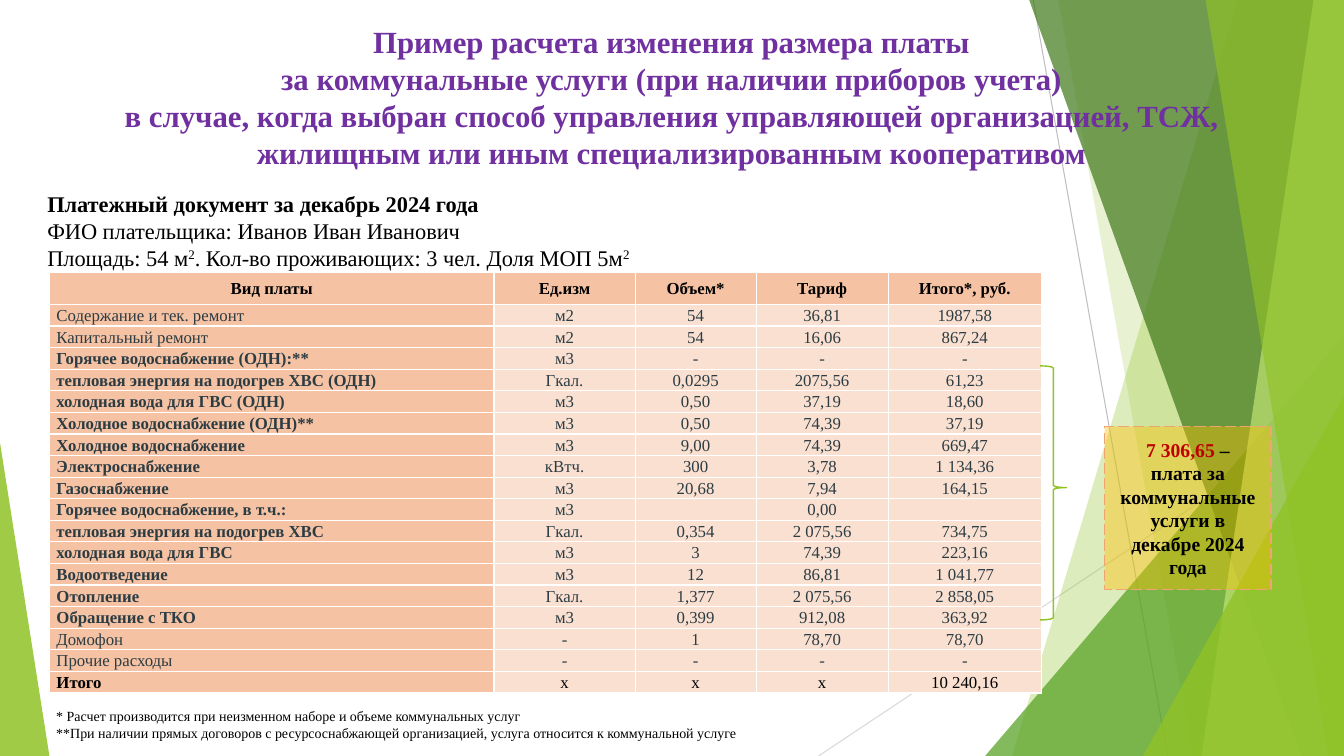
from lxml.etree import SubElement
from pptx import Presentation
from pptx.dml.color import RGBColor
from pptx.enum.dml import MSO_LINE
from pptx.enum.shapes import MSO_CONNECTOR, MSO_SHAPE
from pptx.enum.text import MSO_ANCHOR, MSO_AUTO_SIZE, PP_ALIGN
from pptx.oxml.ns import qn
from pptx.util import Inches, Pt

COLORS = {
    "black": "000000", "slate": "2C3C43", "purple": "7030A0", "red": "C00000",
    "gold": "FFC000", "orange": "F1A374", "peach": "F5C2A3", "cream": "FAE0D1",
    "green": "90C226", "leaf": "54A021", "forest": "3F7819", "lime": "C0E474",
    "gray": "BFBFBF", "silver": "D9D9D9",
}

TITLE_LINES = [
    "Пример расчета изменения размера платы",
    "за коммунальные услуги (при наличии приборов учета)",
    "в случае, когда выбран способ управления управляющей организацией, ТСЖ,",
    "жилищным или иным специализированным кооперативом",
]
HEADERS = ["Вид платы", "Ед.изм", "Объем*", "Тариф", "Итого*, руб."]
CHARGES = """Содержание и тек. ремонт|м2|54|36,81|1987,58
Капитальный ремонт|м2|54|16,06|867,24
Горячее водоснабжение (ОДН):**|м3|-|-|-
тепловая энергия на подогрев ХВС (ОДН)|Гкал.|0,0295|2075,56|61,23
холодная вода для ГВС (ОДН)|м3|0,50|37,19|18,60
Холодное водоснабжение (ОДН)**|м3|0,50|74,39|37,19
Холодное водоснабжение|м3|9,00|74,39|669,47
Электроснабжение|кВтч.|300|3,78|1 134,36
Газоснабжение|м3|20,68|7,94|164,15
Горячее водоснабжение, в т.ч.:|м3||0,00|
тепловая энергия на подогрев ХВС|Гкал.|0,354|2 075,56|734,75
холодная вода для ГВС|м3|3|74,39|223,16
Водоотведение|м3|12|86,81|1 041,77
Отопление|Гкал.|1,377|2 075,56|2 858,05
Обращение с ТКО|м3|0,399|912,08|363,92
Домофон|-|1|78,70|78,70
Прочие расходы|-|-|-|-
Итого|х|х|х|10 240,16"""
NOTES = [
    "* Расчет производится при неизменном наборе и объеме коммунальных услуг",
    "**При наличии прямых договоров с ресурсоснабжающей организацией, "
    "услуга относится к коммунальной услуге",
]
UTILITY_ROWS = range(3, 16)
COLUMN_WIDTHS = [33.08, 10.5, 9, 9.83, 11.4]
HEADER_HEIGHT, ROW_HEIGHT = 4.27, 2.85


class Slide:
    """Draws on one page; every length is a percentage of its width or height."""

    font_name = "Times New Roman"

    def __init__(self, deck):
        self.width, self.height = deck.slide_width, deck.slide_height
        self.page = deck.slides.add_slide(deck.slide_layouts[5])
        self.shapes = self.page.shapes

    def x(self, share):
        return round(self.width * share / 100)

    def y(self, share):
        return round(self.height * share / 100)

    def area(self, left, top, width, height):
        return self.x(left), self.y(top), self.x(width), self.y(height)

    def color(self, name):
        return RGBColor.from_string(COLORS[name])

    def paint(self, shape, color, opacity=100):
        shape.shadow.inherit = False
        shape.line.fill.background()
        shape.fill.solid()
        shape.fill.fore_color.rgb = self.color(color)
        tint = shape._element.spPr.find(qn("a:solidFill")).find(qn("a:srgbClr"))
        SubElement(tint, qn("a:alpha"), val=str(opacity * 1000))

    def style(self, span, size, color="black", bold=False, raised=False):
        values = {"name": self.font_name, "size": Pt(size), "bold": bold}
        for name, value in values.items():
            setattr(span.font, name, value)
        span.font.color.rgb = self.color(color)
        if raised:
            span.font._element.set("baseline", "30000")

    def fill_frame(self, frame, paragraphs, align=PP_ALIGN.LEFT, **layout):
        """Fill a frame; a paragraph is a list of (text, format) spans."""
        for name, value in {"word_wrap": True, **layout}.items():
            setattr(frame, name, value)
        for number, spans in enumerate(paragraphs):
            para = frame.add_paragraph() if number else frame.paragraphs[0]
            para.alignment = align
            for text, form in spans:
                span = para.add_run()
                span.text = text
                self.style(span, **form)

    def title(self, lines, place, **form):
        title = self.shapes.title
        self.shapes._spTree.append(title._element)
        title.left, title.top, title.width, title.height = self.area(*place)
        layout = {"auto_size": MSO_AUTO_SIZE.NONE, "word_wrap": True,
                  "vertical_anchor": MSO_ANCHOR.TOP, "margin_top": Inches(0.07)}
        for name, value in layout.items():
            setattr(title.text_frame, name, value)
        para = title.text_frame.paragraphs[0]
        para.text = "\v".join(lines)
        para.alignment = PP_ALIGN.CENTER
        for span in para.runs:
            self.style(span, **form)

    def text(self, place, paragraphs):
        box = self.shapes.add_textbox(*self.area(*place))
        self.fill_frame(box.text_frame, paragraphs)

    def line(self, start, end, color):
        line = self.shapes.add_connector(
            MSO_CONNECTOR.STRAIGHT, self.x(start[0]), self.y(start[1]),
            self.x(end[0]), self.y(end[1]))
        line.line.color.rgb = self.color(color)
        line.line.width = Pt(0.75)
        SubElement(line._element.spPr, qn("a:effectLst"))

    def band(self, top_x, bottom_x, color, opacity):
        """Fill the slide from a slanted edge to its right side."""
        outline = self.shapes.build_freeform(self.x(top_x), 0)
        outline.add_line_segments([
            (self.width, 0), (self.width, self.height),
            (self.x(bottom_x), self.height)])
        self.paint(outline.convert_to_shape(), color, opacity)

    def triangle(self, place, apex, color, opacity):
        shape = self.shapes.add_shape(MSO_SHAPE.ISOSCELES_TRIANGLE, *self.area(*place))
        shape.adjustments[0] = apex
        self.paint(shape, color, opacity)

    def callout(self, place, paragraphs):
        box = self.shapes.add_shape(MSO_SHAPE.RECTANGLE, *self.area(*place))
        self.paint(box, "gold", 41)
        box.line.color.rgb = self.color("orange")
        box.line.width = Pt(1)
        box.line.dash_style = MSO_LINE.LONG_DASH
        self.fill_frame(box.text_frame, paragraphs, PP_ALIGN.CENTER,
                        vertical_anchor=MSO_ANCHOR.MIDDLE)

    def brace(self, place, color):
        brace = self.shapes.add_shape(MSO_SHAPE.RIGHT_BRACE, *self.area(*place))
        brace.adjustments[0], brace.adjustments[1] = 0.083, 0.479
        brace.shadow.inherit = False
        brace.fill.background()
        brace.line.color.rgb = self.color(color)
        brace.line.width = Pt(1)

    def cell(self, cell, text, fill, align, **form):
        layout = {"margin_left": Inches(0.07), "margin_right": Inches(0.07),
                  "margin_top": 0, "margin_bottom": 0,
                  "vertical_anchor": MSO_ANCHOR.MIDDLE}
        for name, value in layout.items():
            setattr(cell, name, value)
        cell.fill.solid()
        cell.fill.fore_color.rgb = self.color(fill)
        self.fill_frame(cell.text_frame, [[(text, form)] if text else []], align)
        para = cell.text_frame.paragraphs[0]
        para.line_spacing = 1.07
        SubElement(para._p, qn("a:endParaRPr"), sz="1200")

    def table(self, left, top, rows):
        height = HEADER_HEIGHT + ROW_HEIGHT * (len(rows) - 1)
        place = self.area(left, top, sum(COLUMN_WIDTHS), height)
        table = self.shapes.add_table(len(rows), len(COLUMN_WIDTHS), *place).table
        table.horz_banding = False
        for column, width in zip(table.columns, COLUMN_WIDTHS):
            column.width = self.x(width)
        last = len(rows) - 1
        for r, values in enumerate(rows):
            table.rows[r].height = self.y(ROW_HEIGHT if r else HEADER_HEIGHT)
            for c, text in enumerate(values):
                named = c == 0 and (r in UTILITY_ROWS or r == last)
                self.cell(
                    table.cell(r, c), text,
                    fill="peach" if r == 0 or c == 0 else "cream",
                    align=PP_ALIGN.LEFT if r and c == 0 else PP_ALIGN.CENTER,
                    size=12, bold=r == 0 or named,
                    color="black" if r in (0, last) else "slate")


def main():
    deck = Presentation()
    deck.slide_width, deck.slide_height = Inches(13.33), Inches(7.5)
    slide = Slide(deck)

    slide.line((76.88, 0), (86.88, 100), "gray")
    slide.line((100, 53.73), (60.9, 100), "silver")
    slide.band(92.1, 75.3, "green", 30)
    slide.band(78.75, 88.73, "green", 20)
    slide.triangle((73.3, 44.44, 26.7, 55.56), 1, "leaf", 72)
    slide.band(76.58, 96.83, "forest", 70)
    slide.band(97.73, 89.4, "lime", 70)
    slide.band(89.7, 98.85, "green", 65)
    slide.triangle((85.05, 52.4, 14.95, 47.6), 1, "green", 80)
    slide.triangle((0, 58.53, 3.68, 41.47), 0, "green", 85)

    slide.title(TITLE_LINES, (0.6, 2.13, 98.7, 19.6), size=22, color="purple", bold=True)
    plain, raised = {"size": 16}, {"size": 16, "raised": True}
    slide.text((2.78, 24.53, 95.78, 12.13), [
        [("Платежный документ за декабрь 2024 года", {"size": 16, "bold": True})],
        [("ФИО плательщика: Иванов Иван Иванович", plain)],
        [("Площадь: 54 м", plain), ("2", raised),
         (". Кол-во проживающих: 3 чел. Доля МОП 5м", plain), ("2", raised)],
    ])
    slide.table(3.68, 36, [HEADERS] + [row.split("|") for row in CHARGES.splitlines()])
    strong = {"size": 14, "bold": True}
    slide.callout((82.2, 56.4, 12.38, 21.6), [
        [("7 306,65 ", {**strong, "color": "red"}), ("–", strong)],
        [("плата за коммунальные услуги в декабре 2024 года", strong)],
    ])
    slide.brace((77.4, 48.4, 1.95, 33.6), "green")
    slide.text((3.45, 92.93, 68.93, 5.87), [[(note, {"size": 10})] for note in NOTES])
    deck.save("out.pptx")


if __name__ == "__main__":
    main()
